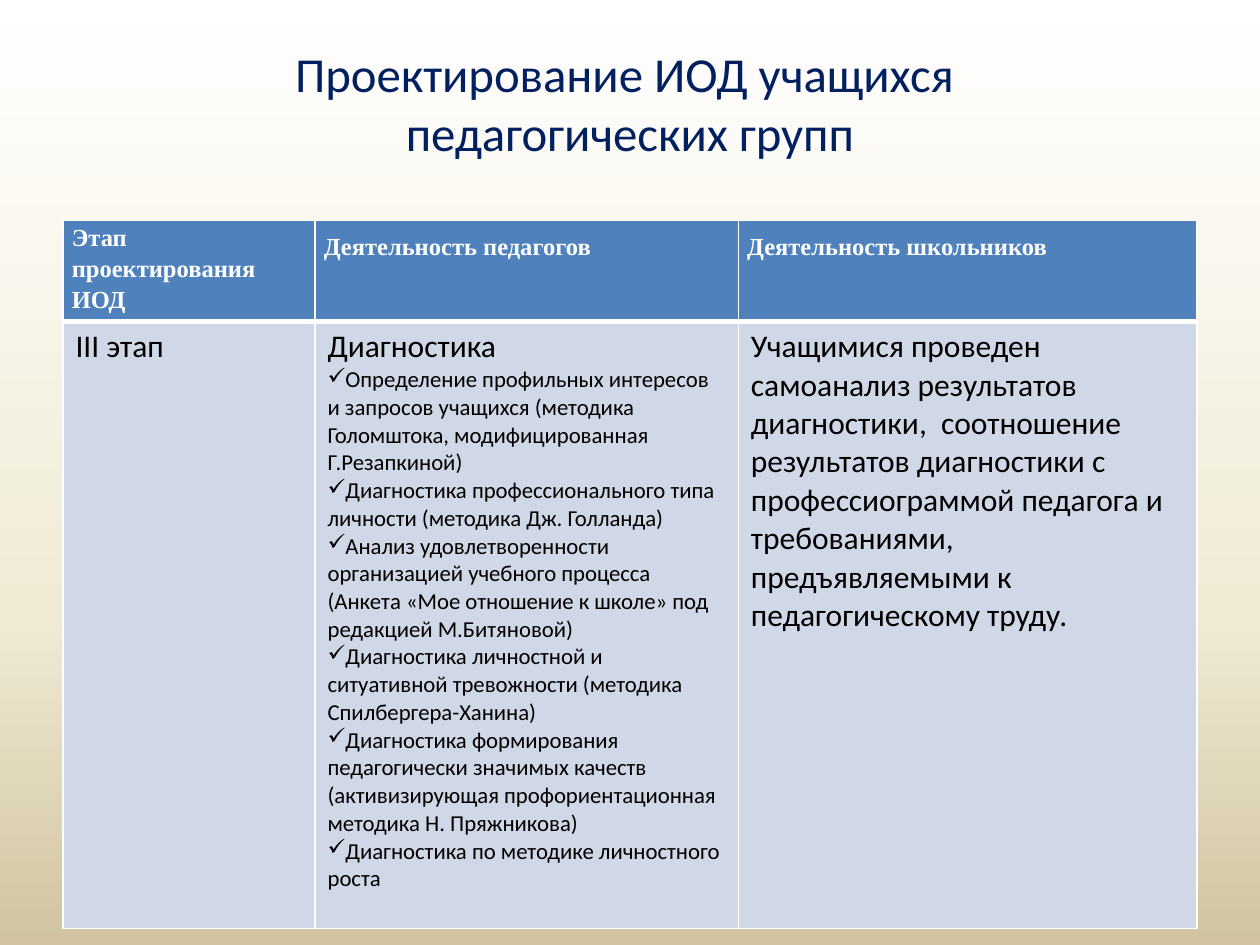
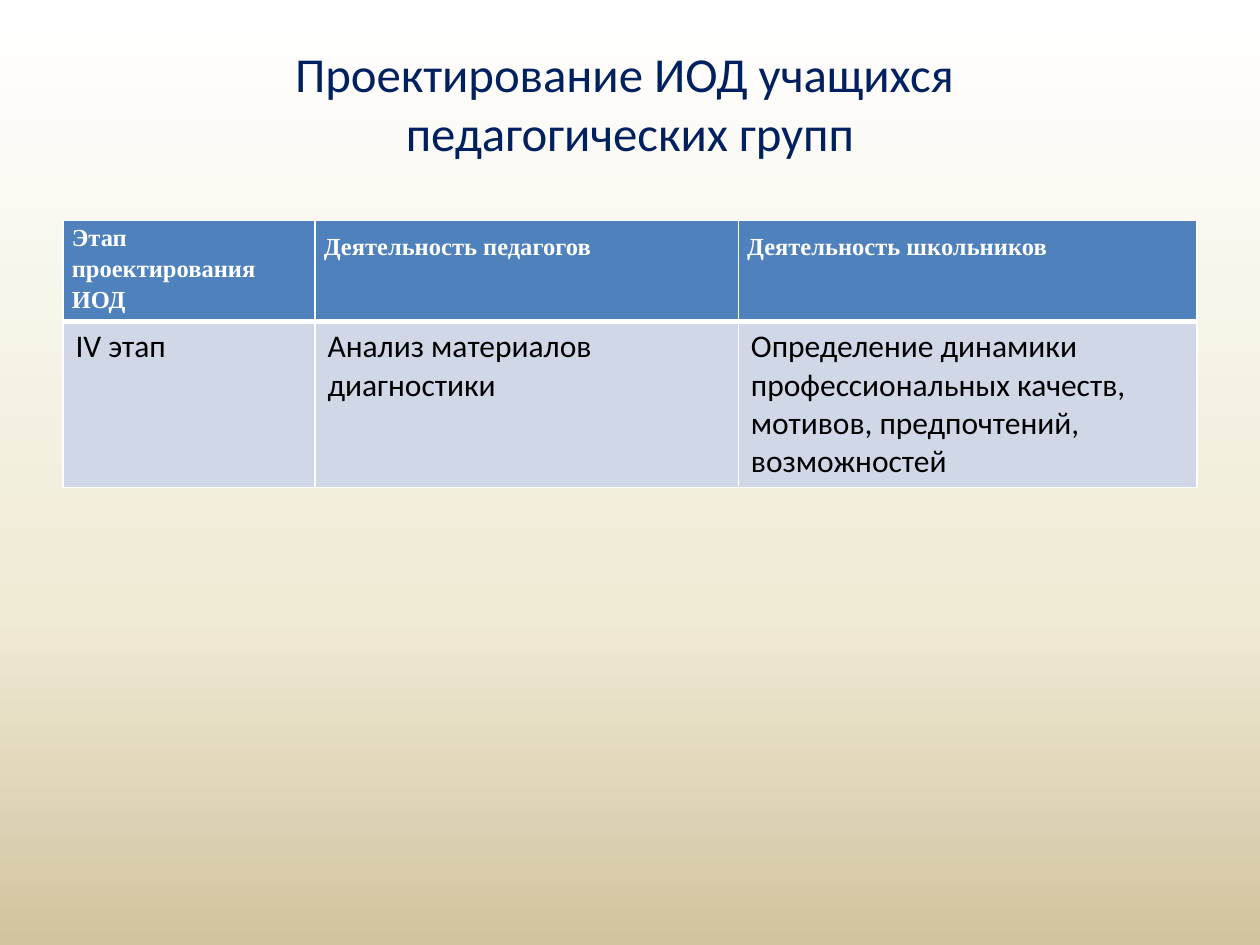
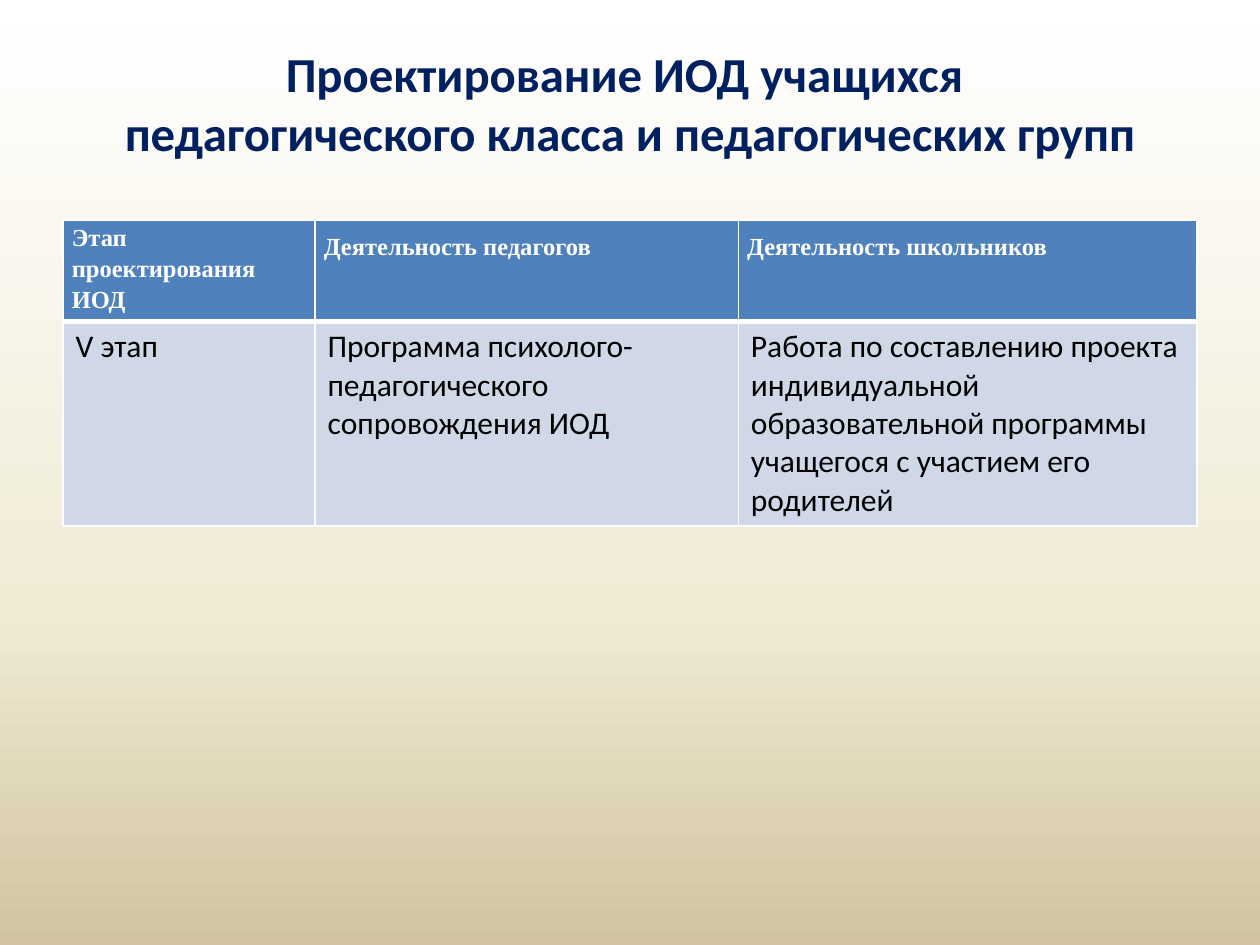
from dataclasses import dataclass
from typing import Any

from lxml import etree
from pptx import Presentation
from pptx.dml.color import RGBColor
from pptx.enum.text import MSO_ANCHOR, MSO_AUTO_SIZE, PP_ALIGN
from pptx.oxml.ns import qn
from pptx.util import Inches, Pt

CENTER, JUSTIFY, LEFT = PP_ALIGN.CENTER, PP_ALIGN.JUSTIFY, PP_ALIGN.LEFT
MIDDLE, TOP = MSO_ANCHOR.MIDDLE, MSO_ANCHOR.TOP
NO_FIT = MSO_AUTO_SIZE.NONE
TITLE_ONLY = 5

# Slide grid: 100 columns by 75 rows
SLIDE_W, SLIDE_H = Inches(10), Inches(7.5)


def cols(n: float) -> int:
    return round(SLIDE_W * n / 100)


def rows(n: float) -> int:
    return round(SLIDE_H * n / 75)


@dataclass(frozen=True)
class Theme:
    font: str = "Calibri"
    header_font: str = "Times New Roman"
    title: str = "002060"
    header_text: str = "FFFFFF"
    body_text: str = "000000"
    header_fill: str = "4F81BD"
    body_fill: str = "D0D8E8"
    border: str = "FFFFFF"
    title_size: float = 27.9
    header_size: float = 14
    body_size: float = 18
    list_size: float = 13
    thin: float = 1
    thick: float = 3
    background: tuple = ((0, "FFFFFF"), (65, "F0EBD5"), (100, "D1C39F"))


@dataclass(frozen=True)
class CellStyle:
    fill: str
    font: dict[str, Any]
    align: Any
    margins: tuple[float, float]  # sides, top and bottom, in inches
    borders: dict[str, float]


@dataclass(frozen=True)
class Stage:
    title: str
    name: str
    teachers: str
    pupils: str
    body_rows: float
    methods: tuple[str, ...] = ()
    bold_title: bool = False


THEME = Theme()
BODY_FONT = dict(name=THEME.font, size=THEME.body_size, color=THEME.body_text, bold=False)
LIST_FONT = BODY_FONT | dict(size=THEME.list_size)
SIDES = dict(lnL=THEME.thin, lnR=THEME.thin)
HEADER = CellStyle(
    THEME.header_fill,
    dict(name=THEME.header_font, size=THEME.header_size, color=THEME.header_text, bold=True),
    JUSTIFY, (0.07, 0), SIDES | dict(lnT=THEME.thin, lnB=THEME.thick))
BODY = CellStyle(
    THEME.body_fill, BODY_FONT, LEFT, (0.1, 0.05),
    SIDES | dict(lnT=THEME.thick, lnB=THEME.thin))

COLUMN_WIDTHS = (20, 33.6, 36.4)
HEADER_ROWS = 8
HEADINGS = (("Этап проектирования ИОД", 1.15),
            ("Деятельность педагогов ", 1.5),
            ("Деятельность школьников ", 1.5))

GROUPS_TITLE = "Проектирование ИОД учащихся \vпедагогических групп"
STAGES = (
    Stage(
        GROUPS_TITLE, "III этап", "Диагностика",
        "Учащимися проведен самоанализ результатов диагностики,  соотношение  "
        "результатов диагностики с профессиограммой педагога и требованиями, "
        "предъявляемыми к педагогическому труду.",
        48.2,
        methods=(
            "Определение профильных интересов и запросов учащихся "
            "(методика Голомштока, модифицированная Г.Резапкиной)",
            "Диагностика профессионального типа личности (методика Дж. Голланда)",
            "Анализ удовлетворенности организацией учебного процесса "
            "(Анкета «Мое отношение к школе» под редакцией М.Битяновой)",
            "Диагностика личностной и ситуативной тревожности "
            "(методика Спилбергера-Ханина)",
            "Диагностика формирования педагогически значимых качеств "
            "(активизирующая профориентационная методика Н. Пряжникова)",
            "Диагностика по методике личностного роста",
        )),
    Stage(
        GROUPS_TITLE, "IV этап", "Анализ материалов диагностики",
        "Определение динамики  профессиональных качеств, мотивов, "
        "предпочтений, возможностей",
        13),
    Stage(
        "Проектирование ИОД учащихся \vпедагогического класса и педагогических групп",
        "V этап", "Программа психолого-педагогического сопровождения ИОД",
        "Работа по составлению проекта индивидуальной образовательной программы  "
        "учащегося с участием его родителей",
        16, bold_title=True),
)


def set_all(target: Any, values: dict[str, Any]) -> None:
    for name, value in values.items():
        setattr(target, name, value)


def format_runs(p: Any, font: dict[str, Any]) -> None:
    for r in p.runs:
        set_all(r.font, dict(name=font["name"], size=Pt(font["size"]), bold=font["bold"]))
        r.font.color.rgb = RGBColor.from_string(font["color"])


def add_color(parent: Any, color: str) -> None:
    etree.SubElement(parent, qn("a:srgbClr"), val=color)


# Shared background on the master
def paint_background(prs: Any) -> None:
    master = prs.slide_master
    fill = master.background.fill
    fill.gradient()
    fill.gradient_angle = 270
    stops = master.element.xpath("p:cSld/p:bg//a:gsLst")[0]
    for old in list(stops):
        stops.remove(old)
    for percent, color in THEME.background:
        add_color(etree.SubElement(stops, qn("a:gs"), pos=str(percent * 1000)), color)


def add_title(slide: Any, text: str, bold: bool) -> None:
    sp = slide.shapes.title
    set_all(sp, dict(left=cols(5), top=rows(3), width=cols(90), height=rows(15)))
    tf = sp.text_frame
    tf.text = text
    # The deeper bottom inset lifts the two lines away from the table
    set_all(tf, dict(auto_size=NO_FIT, word_wrap=True, vertical_anchor=MIDDLE,
                     margin_bottom=rows(5.2)))
    p = tf.paragraphs[0]
    p.alignment = CENTER
    format_runs(p, dict(name=THEME.font, size=THEME.title_size,
                        color=THEME.title, bold=bold))


# Table parts
def add_borders(cell: Any, borders: dict[str, float]) -> None:
    tc_pr = cell._tc.get_or_add_tcPr()
    for i, (side, width) in enumerate(borders.items()):
        ln = etree.Element(qn(f"a:{side}"), w=str(Pt(width)))
        add_color(etree.SubElement(ln, qn("a:solidFill")), THEME.border)
        tc_pr.insert(i, ln)


def fill_cell(cell: Any, text: str, style: CellStyle, spacing: float = 1.0) -> None:
    side, edge = (Inches(m) for m in style.margins)
    set_all(cell, dict(text=text, vertical_anchor=TOP, margin_left=side,
                       margin_right=side, margin_top=edge, margin_bottom=edge))
    cell.fill.solid()
    cell.fill.fore_color.rgb = RGBColor.from_string(style.fill)
    add_borders(cell, style.borders)
    p = cell.text_frame.paragraphs[0]
    set_all(p, dict(alignment=style.align, line_spacing=spacing))
    format_runs(p, style.font)


def add_check_item(cell: Any, text: str) -> None:
    p = cell.text_frame.add_paragraph()
    p.text = text
    format_runs(p, LIST_FONT)
    p_pr = p._p.get_or_add_pPr()
    set_indent = dict(marL="0", indent="0")
    for name, value in set_indent.items():
        p_pr.set(name, value)
    etree.SubElement(p_pr, qn("a:buChar"), char="✓")


def add_stage_table(slide: Any, stage: Stage) -> None:
    heights = (HEADER_ROWS, stage.body_rows)
    frame = slide.shapes.add_table(len(heights), len(COLUMN_WIDTHS), cols(5), rows(17.5),
                                   cols(sum(COLUMN_WIDTHS)), rows(sum(heights)))
    table = frame.table
    table.horz_banding = False
    for column, width in zip(table.columns, COLUMN_WIDTHS):
        column.width = cols(width)
    for row, height in zip(table.rows, heights):
        row.height = rows(height)
    for i, (heading, spacing) in enumerate(HEADINGS):
        fill_cell(table.cell(0, i), heading, HEADER, spacing)
    for i, text in enumerate((stage.name, stage.teachers, stage.pupils)):
        fill_cell(table.cell(1, i), text, BODY)
    for method in stage.methods:
        add_check_item(table.cell(1, 1), method)


def main() -> None:
    prs = Presentation()
    set_all(prs, dict(slide_width=SLIDE_W, slide_height=SLIDE_H))
    paint_background(prs)
    for stage in STAGES:
        slide = prs.slides.add_slide(prs.slide_layouts[TITLE_ONLY])
        add_title(slide, stage.title, stage.bold_title)
        add_stage_table(slide, stage)
    prs.save("out.pptx")


if __name__ == "__main__":
    main()
